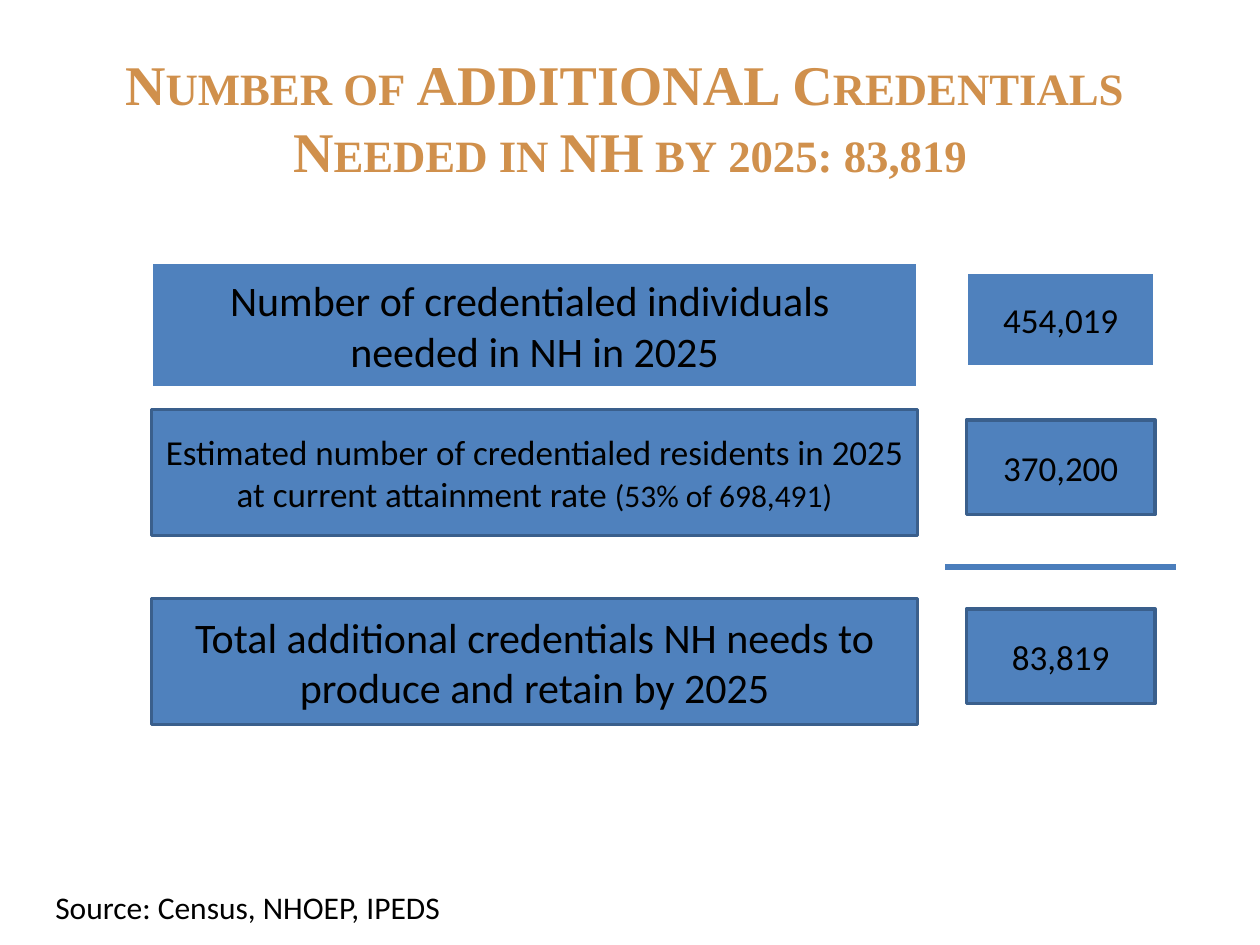
from lxml import etree
from pptx import Presentation
from pptx import util as u
from pptx.dml.color import RGBColor
from pptx.enum import shapes, text
from pptx.oxml.ns import qn

Pt = u.Pt
FILL, EDGE, WHITE, BLACK = "4F81BD", "3A5F8C", "FFFFFF", "000000"

# label paragraphs (each a list of (text, size) runs), value, top, edge colour
ROWS = [
    ([[("Number of credentialed individuals ", 24)],
      [("needed in NH in 2025", 24)]], "454,019", 149.8, WHITE),
    ([[("Estimated number of credentialed residents in 2025 "
        "at current attainment rate ", 20), ("(53% of 698,491)", 18)]],
     "370,200", 234, EDGE),
    ([[("Total additional credentials NH needs to produce and retain by 2025", 24)]],
     "83,819", 342, EDGE),
]


def rgb(value):
    return RGBColor.from_string(value)


def put_text(tf, paragraphs, font="Calibri", color=BLACK, bold=False,
             small_caps=False, align=text.PP_ALIGN.CENTER,
             anchor=text.MSO_ANCHOR.MIDDLE, wrap=True):
    """Fill a text frame; a vertical tab in a run's text is a line break."""
    tf.word_wrap = wrap
    tf.vertical_anchor = anchor
    for i, runs in enumerate(paragraphs):
        p = tf.add_paragraph() if i else tf.paragraphs[0]
        p.alignment = align
        for content, size in runs:
            for j, line in enumerate(content.split("\v")):
                if j:
                    p.add_line_break()
                r = p.add_run()
                r.text = line
                r.font.name, r.font.size, r.font.bold = font, Pt(size), bold
                r.font.color.rgb = rgb(color)
                if small_caps:
                    r.font._element.set("cap", "small")


def add_title(s, x, y, w, h):
    tb = s.shapes.add_textbox(Pt(x), Pt(y), Pt(w), Pt(h))
    title = "Number of ADDITIONAL Credentials \vNeeded in NH by 2025: 83,819"
    put_text(tb.text_frame, [[(title, 32)]], font="Times New Roman",
             color="D0904C", bold=True, small_caps=True)


def add_box(s, x, y, w, h, paragraphs, edge):
    sp = s.shapes.add_shape(shapes.MSO_SHAPE.RECTANGLE, Pt(x), Pt(y), Pt(w), Pt(h))
    sp.shadow.inherit = False
    sp.fill.solid()
    sp.fill.fore_color.rgb = rgb(FILL)
    sp.line.color.rgb = rgb(edge)
    sp.line.width = Pt(2)
    put_text(sp.text_frame, paragraphs)


def add_row(s, x, y, w, h, label, value, edge):
    """Label box at the left, smaller value box at the right."""
    label_w, value_w, value_h = 437.8, 108, 54
    add_box(s, x, y, label_w, h, label, edge)
    add_box(s, x + w - value_w, y + 6, value_w, value_h, [[(value, 20)]], edge)


def add_sum_line(s, x, y, w):
    line = s.shapes.add_connector(shapes.MSO_CONNECTOR.STRAIGHT,
                                  Pt(x), Pt(y), Pt(x + w), Pt(y))
    line.line.color.rgb = rgb("4B7EBC")
    line.line.width = Pt(3)
    etree.SubElement(line._element.spPr, qn("a:effectLst"))


def add_source(s, x, y, w, h):
    tb = s.shapes.add_textbox(Pt(x), Pt(y), Pt(w), Pt(h))
    put_text(tb.text_frame, [[("Source: Census, NHOEP, IPEDS", 18)]], wrap=False,
             align=text.PP_ALIGN.LEFT, anchor=text.MSO_ANCHOR.TOP)
    tb.text_frame.auto_size = text.MSO_AUTO_SIZE.SHAPE_TO_FIT_TEXT


def main():
    prs = Presentation()
    prs.slide_width, prs.slide_height = Pt(720), Pt(540)
    s = prs.slides.add_slide(prs.slide_layouts[6])

    add_title(s, 36, 21.6, 648, 90)
    # Subtraction: needed, minus estimated, equals additional
    for label, value, top, edge in ROWS:
        add_row(s, 86.6, top, 573.6, 72, label, value, edge)
    add_sum_line(s, 540, 324, 132)
    add_source(s, 24.5, 504, 253.4, 28.8)

    prs.save("out.pptx")


if __name__ == "__main__":
    main()
